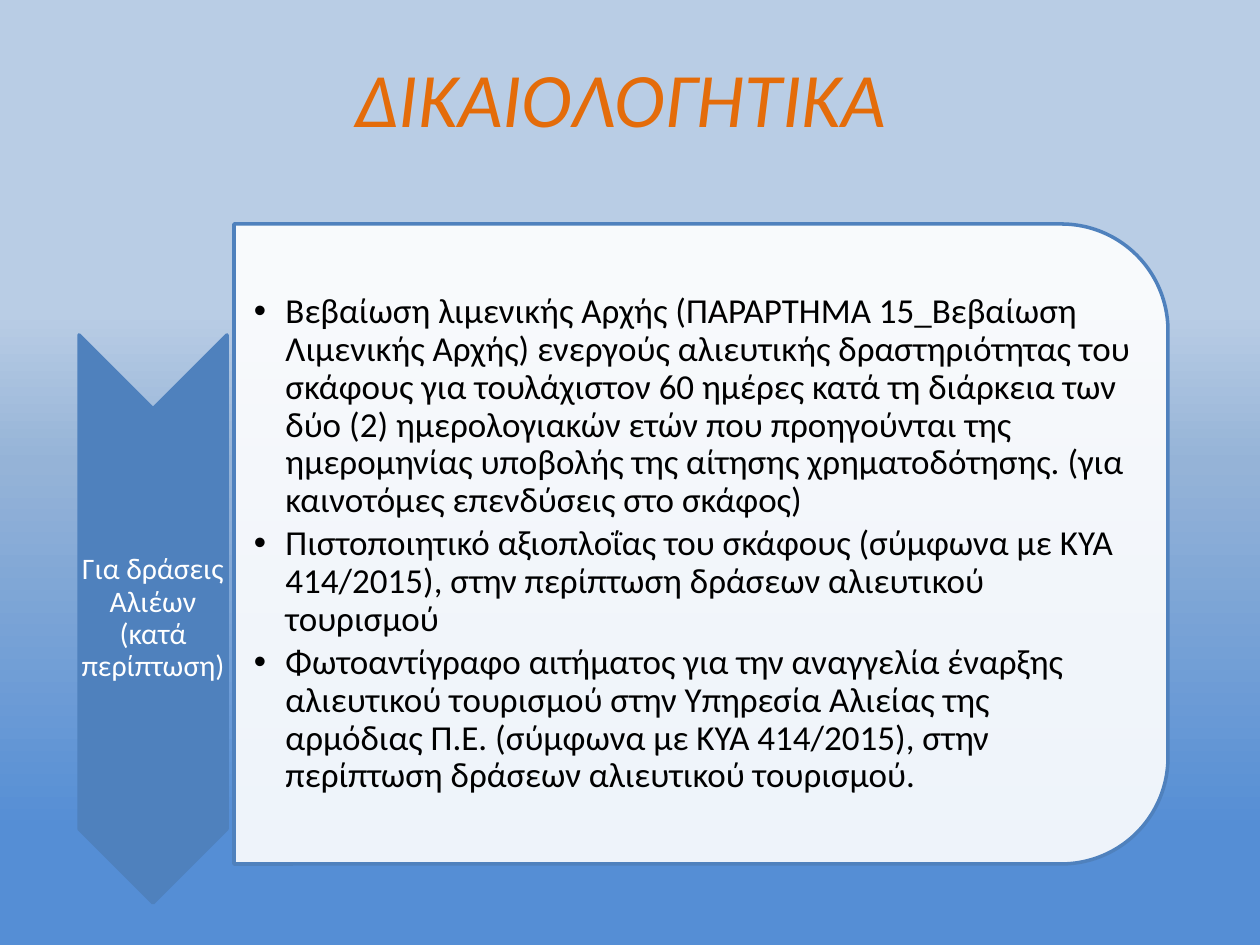
from dataclasses import dataclass

from lxml import etree
from pptx import Presentation
from pptx.dml.color import RGBColor
from pptx.enum.shapes import MSO_SHAPE
from pptx.enum.text import MSO_ANCHOR, MSO_AUTO_SIZE, PP_ALIGN
from pptx.oxml import parse_xml
from pptx.oxml.ns import nsdecls, qn
from pptx.util import Pt

PX = 914400 / 126
FONT = "Calibri"
CENTER, LEFT = PP_ALIGN.CENTER, PP_ALIGN.LEFT
MIDDLE = MSO_ANCHOR.MIDDLE
CHEVRON = MSO_SHAPE.CHEVRON
ROUND = MSO_SHAPE.ROUND_2_SAME_RECTANGLE

COLORS = {
    "title": "E46C0A", "blue": "4F81BD", "white": "FFFFFF", "black": "000000",
    "sky": "B9CDE5", "haze": "95B3D7", "sea": "558ED5",
}
STOPS = [(33, "sky"), (49, "haze"), (88, "sea")]

TITLE = "ΔΙΚΑΙΟΛΟΓΗΤΙΚΑ "
LABEL = "Για δράσεις Αλιέων (κατά περίπτωση)"
ITEMS = [
    "Βεβαίωση λιμενικής Αρχής (ΠΑΡΑΡΤΗΜΑ 15_Βεβαίωση Λιμενικής Αρχής) ενεργούς "
    "αλιευτικής δραστηριότητας του σκάφους για τουλάχιστον 60 ημέρες κατά τη "
    "διάρκεια των δύο (2) ημερολογιακών ετών που προηγούνται της ημερομηνίας "
    "υποβολής της αίτησης χρηματοδότησης. (για καινοτόμες επενδύσεις στο σκάφος)",
    "Πιστοποιητικό αξιοπλοΐας του σκάφους (σύμφωνα με ΚΥΑ 414/2015), στην "
    "περίπτωση δράσεων αλιευτικού τουρισμού",
    "Φωτοαντίγραφο αιτήματος για την αναγγελία έναρξης αλιευτικού τουρισμού στην "
    "Υπηρεσία Αλιείας της αρμόδιας Π.Ε. (σύμφωνα με ΚΥΑ 414/2015), στην "
    "περίπτωση δράσεων αλιευτικού τουρισμού.",
]


@dataclass
class Box:
    x: int
    y: int
    w: int
    h: int


@dataclass
class Turned:
    """A preset turned by 90 degrees; box is its area as seen."""
    kind: MSO_SHAPE
    box: Box
    fill: str
    alpha: int = 100


@dataclass
class Block:
    box: Box
    lines: list[str]
    size: int
    color: str
    align: PP_ALIGN
    inset: int
    after: int
    bullet: bool = False


SHAPES = [
    Turned(CHEVRON, Box(79, 335, 148, 568), "blue"),
    Turned(ROUND, Box(234, 224, 934, 640), "white", 90),
]
BLOCKS = [
    Block(Box(79, 408, 148, 421), [LABEL], 17, "white", CENTER, 1, 6),
    Block(Box(234, 256, 902, 577), ITEMS, 20, "black", LEFT, 20, 3, True),
]


def px(n: float) -> int:
    return round(n * PX)


def rgb(name: str) -> RGBColor:
    return RGBColor.from_string(COLORS[name])


def paint_back(slide) -> None:
    stops = "".join(
        f'<a:gs pos="{pos * 1000}"><a:srgbClr val="{COLORS[name]}"/></a:gs>'
        for pos, name in STOPS)
    back = parse_xml(
        f'<p:bg {nsdecls("p", "a")}><p:bgPr><a:gradFill rotWithShape="1">'
        f'<a:gsLst>{stops}</a:gsLst><a:lin ang="5400000" scaled="0"/>'
        '</a:gradFill><a:effectLst/></p:bgPr></p:bg>')
    slide.element.cSld.insert(0, back)


def set_title(shape, box: Box) -> None:
    shape.left, shape.top, shape.width, shape.height = map(
        px, (box.x, box.y, box.w, box.h))
    frame = shape.text_frame
    frame.text = TITLE
    frame.auto_size = MSO_AUTO_SIZE.NONE
    frame.vertical_anchor = MIDDLE
    para = frame.paragraphs[0]
    para.alignment = CENTER
    set_font(para.font, 44, "title")
    para.font.italic = True


def set_font(font, size: int, color: str) -> None:
    font.name, font.size = FONT, Pt(size)
    font.color.rgb = rgb(color)


def add_turned(slide, part: Turned) -> None:
    box = part.box
    shift = (box.w - box.h) / 2
    shape = slide.shapes.add_shape(
        part.kind, px(box.x + shift), px(box.y - shift), px(box.h), px(box.w))
    shape.rotation = 90
    shape.shadow.inherit = False
    shape.fill.solid()
    shape.fill.fore_color.rgb = rgb(part.fill)
    if part.alpha < 100:
        tint = shape.element.spPr.find(qn("a:solidFill"))[0]
        etree.SubElement(tint, qn("a:alpha"), val=str(part.alpha * 1000))
    shape.line.color.rgb = rgb("blue")
    shape.line.width = Pt(2)


def add_bullet(para) -> None:
    props = para._p.get_or_add_pPr()
    props.set("marL", str(px(31.5)))
    props.set("indent", str(px(-31.5)))
    etree.SubElement(props, qn("a:buFont"), typeface="Arial")
    etree.SubElement(props, qn("a:buChar"), char="•")


def add_block(slide, block: Block) -> None:
    box = block.box
    area = slide.shapes.add_textbox(*map(px, (box.x, box.y, box.w, box.h)))
    frame = area.text_frame
    frame.word_wrap = True
    frame.vertical_anchor = MIDDLE
    frame.margin_left = px(block.inset)
    frame.margin_top = frame.margin_right = frame.margin_bottom = px(1)
    frame.text = "\n".join(block.lines)
    for para in frame.paragraphs:
        para.alignment = block.align
        para.line_spacing = 0.9
        para.space_after = Pt(block.after)
        if block.bullet:
            add_bullet(para)
        set_font(para.font, block.size, block.color)


def main() -> None:
    deck = Presentation()
    deck.slide_width, deck.slide_height = px(1260), px(945)
    slide = deck.slides.add_slide(deck.slide_layouts[5])

    # Backdrop and heading
    paint_back(slide)
    set_title(slide.shapes.title, Box(63, 38, 1134, 117))

    # Arrow with its label, panel with its list
    for part, block in zip(SHAPES, BLOCKS):
        add_turned(slide, part)
        add_block(slide, block)

    deck.save("out.pptx")


if __name__ == "__main__":
    main()
